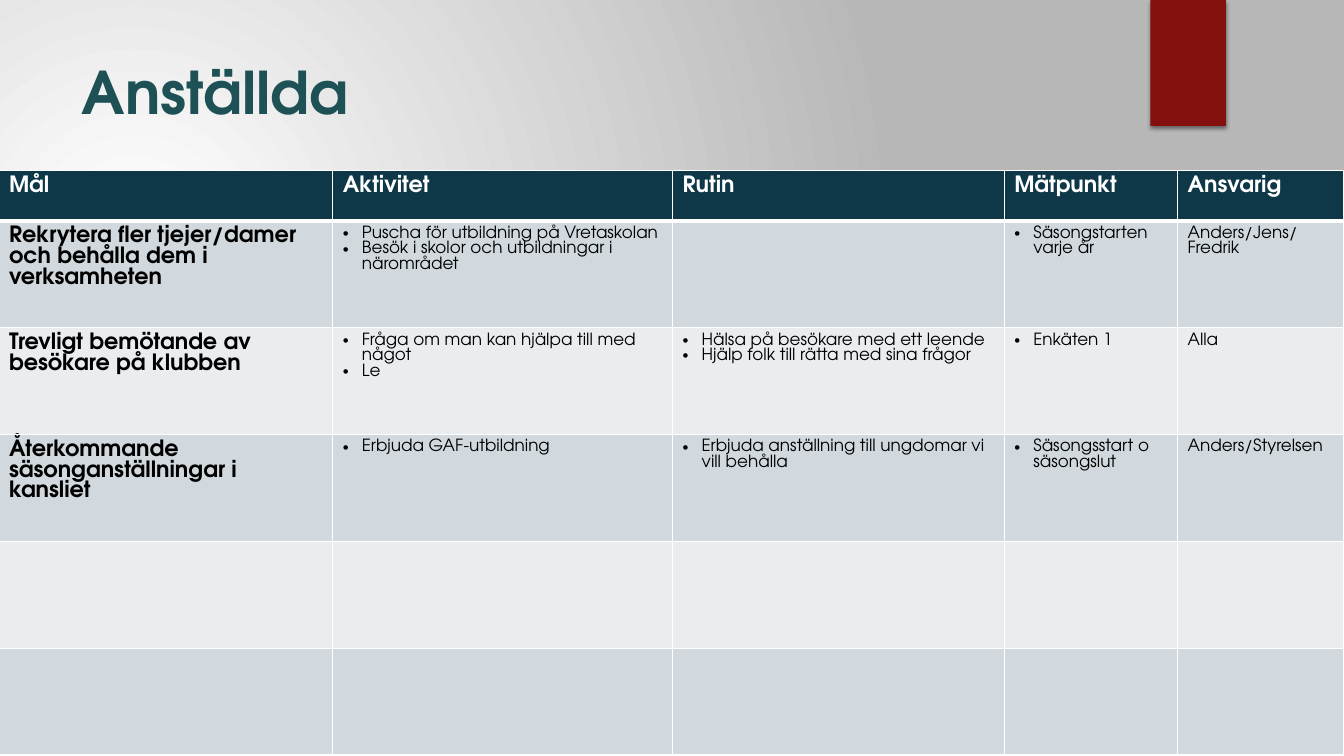
from lxml.etree import SubElement
from pptx import Presentation
from pptx.dml.color import RGBColor
from pptx.enum.shapes import MSO_SHAPE as Shape
from pptx.enum.text import MSO_ANCHOR as Anchor
from pptx.oxml.ns import qn
from pptx.util import Inches, Pt

FONT = "TeX Gyre Adventor"
COLORS = {
    "white": "FFFFFF", "grey": "B7B7B7", "ribbon": "84100E", "title": "1E5155",
    "header": "0E3847", "odd": "D1D9DE", "even": "E9EDEF", "black": "000000",
}
COLUMN_WIDTHS = [3.31, 3.37, 3.29, 1.72, 1.65]
HEADER_HEIGHT, ROW_HEIGHT = 0.5, 1.06
BULLET_INDENT = 0.19
BULLET_COLUMNS = {1, 2, 3}
LINE_RATIO = 0.93
HEADINGS = ["Mål", "Aktivitet", "Rutin", "Mätpunkt", "Ansvarig"]
GOALS = [
    [["Rekrytera fler tjejer/damer och behålla dem i verksamheten"],
     ["Puscha för utbildning på Vretaskolan",
      "Besök i skolor och utbildningar i närområdet"],
     [], ["Säsongstarten varje år"], ["Anders/Jens/Fredrik"]],
    [["Trevligt bemötande av besökare på klubben"],
     ["Fråga om man kan hjälpa till med något", "Le"],
     ["Hälsa på besökare med ett leende", "Hjälp folk till rätta med sina frågor"],
     ["Enkäten 1"], ["Alla"]],
    [["Återkommande säsonganställningar i kansliet"],
     ["Erbjuda GAF-utbildning"],
     ["Erbjuda anställning till ungdomar vi vill behålla"],
     ["Säsongsstart o säsongslut"], ["Anders/Styrelsen"]],
    [[]] * 5,
    [[]] * 5,
]


def color(name):
    return RGBColor.from_string(COLORS[name])


def add_span(para, text, size, tint, bold=False):
    span = para.add_run()
    span.text = text
    span.font.name = FONT
    span.font.size = Pt(size)
    span.font.bold = bold
    span.font.color.rgb = color(tint)


def paint_background(page):
    fill = page.background.fill
    fill.gradient()
    for stop, position, tint in zip(fill.gradient_stops, (0, 1), ("white", "grey")):
        stop.position = position
        stop.color.rgb = color(tint)
    gradient = page.element.find(".//" + qn("a:gradFill"))
    gradient.remove(gradient.find(qn("a:lin")))
    circle = SubElement(gradient, qn("a:path"), path="circle")
    SubElement(circle, qn("a:fillToRect"), l="45000", t="65000", r="125000", b="100000")


def add_ribbon(page, left, top, width, height):
    ribbon = page.shapes.add_shape(
        Shape.RECTANGLE, Inches(left), Inches(top), Inches(width), Inches(height))
    ribbon.fill.solid()
    ribbon.fill.fore_color.rgb = color("ribbon")
    ribbon.line.fill.background()
    ribbon.shadow.inherit = False
    effects = ribbon.element.spPr.find(qn("a:effectLst"))
    shadow = SubElement(effects, qn("a:outerShdw"), blurRad=str(Pt(3)),
                        dist=str(Pt(2)), dir="5400000", rotWithShape="0")
    tint = SubElement(shadow, qn("a:srgbClr"), val=COLORS["black"])
    SubElement(tint, qn("a:alpha"), val="45000")


def add_title(page, left, top, width, height):
    box = page.shapes.add_textbox(
        Inches(left), Inches(top), Inches(width), Inches(height))
    frame = box.text_frame
    frame.word_wrap = True
    frame.vertical_anchor = Anchor.TOP
    add_span(frame.paragraphs[0], "Anställda", 42, "title", True)


def add_bullet(para):
    indent = Inches(BULLET_INDENT)
    settings = para._p.get_or_add_pPr()
    settings.set("marL", str(indent))
    settings.set("indent", str(-indent))
    SubElement(settings, qn("a:buFont"), typeface="Arial")
    SubElement(settings, qn("a:buChar"), char="•")


def style_cell(cell, tint, top_width, bottom_width):
    settings = cell._tc.get_or_add_tcPr()
    for side, width in zip("LRTB", (1, 1, top_width, bottom_width)):
        line = SubElement(settings, qn("a:ln" + side), w=str(Pt(width)))
        solid = SubElement(line, qn("a:solidFill"))
        SubElement(solid, qn("a:srgbClr"), val=COLORS["white"])
    cell.fill.solid()
    cell.fill.fore_color.rgb = color(tint)


def fill_cell(cell, lines, size, tint, bold, bulleted):
    frame = cell.text_frame
    for index, text in enumerate(lines):
        para = frame.add_paragraph() if index else frame.paragraphs[0]
        para.line_spacing = Pt(round(size * LINE_RATIO, 1))
        if bulleted:
            add_bullet(para)
        add_span(para, text, size, tint, bold)


def add_goal_table(page, left, top):
    rows = [[[heading] for heading in HEADINGS]] + GOALS
    heights = [HEADER_HEIGHT] + [ROW_HEIGHT] * len(GOALS)
    table = page.shapes.add_table(
        len(rows), len(HEADINGS), Inches(left), Inches(top),
        Inches(sum(COLUMN_WIDTHS)), Inches(sum(heights))).table
    for column, width in zip(table.columns, COLUMN_WIDTHS):
        column.width = Inches(width)
    for row, height in zip(table.rows, heights):
        row.height = Inches(height)
    for row_index, row in enumerate(rows):
        is_header = row_index == 0
        band = "header" if is_header else ("odd" if row_index % 2 else "even")
        for column_index, lines in enumerate(row):
            cell = table.cell(row_index, column_index)
            style_cell(cell, band, 3 if row_index == 1 else 1, 3 if is_header else 1)
            strong = is_header or column_index == 0
            fill_cell(cell, lines, 16 if strong else 12,
                      "white" if is_header else "black", strong,
                      not is_header and column_index in BULLET_COLUMNS)


def main():
    deck = Presentation()
    deck.slide_width = Inches(13.33)
    deck.slide_height = Inches(7.5)
    page = deck.slides.add_slide(deck.slide_layouts[6])
    paint_background(page)
    add_ribbon(page, 11.41, 0, 0.75, 1.25)
    add_title(page, 0.71, 0.5, 10.29, 1.53)
    add_goal_table(page, -0.01, 1.69)
    deck.save("out.pptx")


if __name__ == "__main__":
    main()
